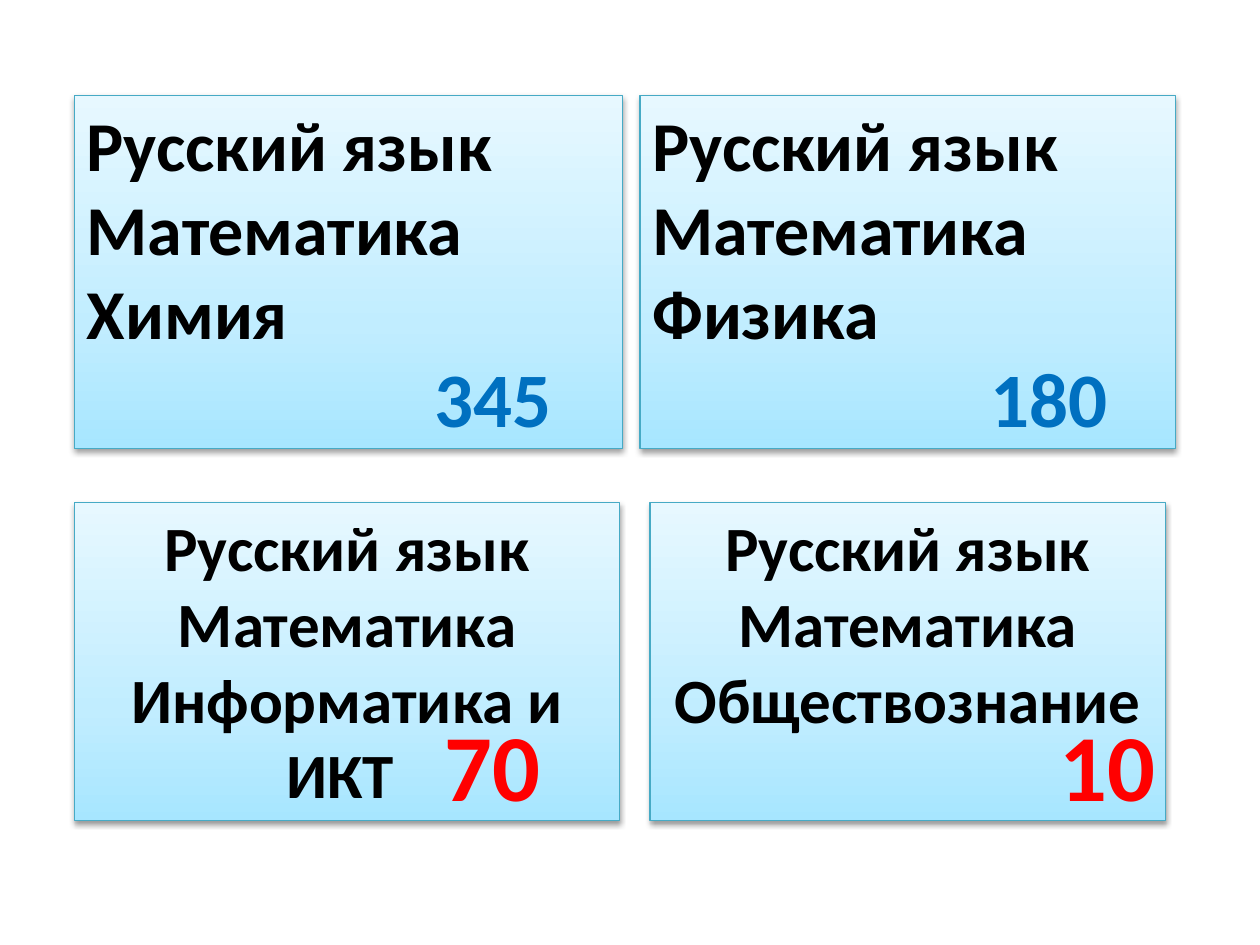
from copy import deepcopy

from lxml import etree
from pptx import Presentation
from pptx.dml.color import RGBColor
from pptx.enum.shapes import MSO_SHAPE
from pptx.enum.text import MSO_ANCHOR, PP_ALIGN
from pptx.oxml.ns import qn
from pptx.util import Inches, Pt

RECT = MSO_SHAPE.RECTANGLE
TOP = MSO_ANCHOR.TOP
LEFT, CENTER = PP_ALIGN.LEFT, PP_ALIGN.CENTER

FONT = "Calibri"
COLORS = {
    "text": "000000", "edge": "46AAC5", "shade": "000000",
    "deep": "A7E6FF", "mid": "C1EDFF", "pale": "E7F8FF",
    "red": "FF0000", "blue": "0070C0",
}
STOPS = [(0, "deep"), (0.35, "mid"), (1, "pale")]
COMMON = ["Русский язык", "Математика"]
CARDS = [
    (0.59, 0.76, 4.35, 2.8, "Химия", 40, LEFT),
    (5.08, 0.76, 4.25, 2.8, "Физика", 40, LEFT),
    (0.59, 3.99, 4.33, 2.52, "Информатика и ИКТ ", 36, CENTER),
    (5.16, 3.99, 4.09, 2.52, "Обществознание", 36, CENTER),
]
COUNTS = [
    (3.43, 5.56, 1.28, 1.01, "70", 54, "red"),
    (8.31, 5.56, 1.28, 1.01, "10", 54, "red"),
    (3.35, 2.73, 1.89, 0.84, "345", 44, "blue"),
    (7.76, 2.73, 1.52, 0.84, "180", 44, "blue"),
]


def rgb(name):
    return RGBColor.from_string(COLORS[name])


def write(shape, lines, size=40, color="text", align=LEFT):
    frame = shape.text_frame
    frame.word_wrap = True
    frame.vertical_anchor = TOP
    for i, line in enumerate(lines):
        para = frame.paragraphs[0] if i == 0 else frame.add_paragraph()
        para.alignment = align
        run = para.add_run()
        run.text = line
        run.font.name = FONT
        run.font.size = Pt(size)
        run.font.bold = True
        run.font.color.rgb = rgb(color)


def shade(shape):
    shape.shadow.inherit = False
    effects = shape.element.spPr.find(qn("a:effectLst"))
    outer = etree.SubElement(
        effects, qn("a:outerShdw"), blurRad=str(Pt(3.1)), dist=str(Pt(1.6)),
        dir="5400000", rotWithShape="0")
    tone = etree.SubElement(outer, qn("a:srgbClr"), val=COLORS["shade"])
    etree.SubElement(tone, qn("a:alpha"), val="38000")


def blend(shape):
    fill = shape.fill
    fill.gradient()
    fill.gradient_angle = 90
    group = shape.element.spPr.find(qn("a:gradFill")).find(qn("a:gsLst"))
    group.append(deepcopy(group[0]))
    for stop, (place, name) in zip(fill.gradient_stops, STOPS):
        stop.position = place
        stop.color.rgb = rgb(name)


def card(slide, x, y, w, h, topic, size, align):
    shape = slide.shapes.add_shape(
        RECT, Inches(x), Inches(y), Inches(w), Inches(h))
    blend(shape)
    shape.line.color.rgb = rgb("edge")
    shape.line.width = Pt(0.75)
    shade(shape)
    write(shape, COMMON + [topic], size=size, align=align)


def count(slide, x, y, w, h, text, size, color):
    box = slide.shapes.add_textbox(
        Inches(x), Inches(y), Inches(w), Inches(h))
    write(box, [text], size=size, color=color)


def main():
    deck = Presentation()
    deck.slide_width, deck.slide_height = Inches(10), Inches(7.5)
    slide = deck.slides.add_slide(deck.slide_layouts[6])
    for item in CARDS:
        card(slide, *item)
    for item in COUNTS:
        count(slide, *item)
    deck.save("out.pptx")


if __name__ == "__main__":
    main()
